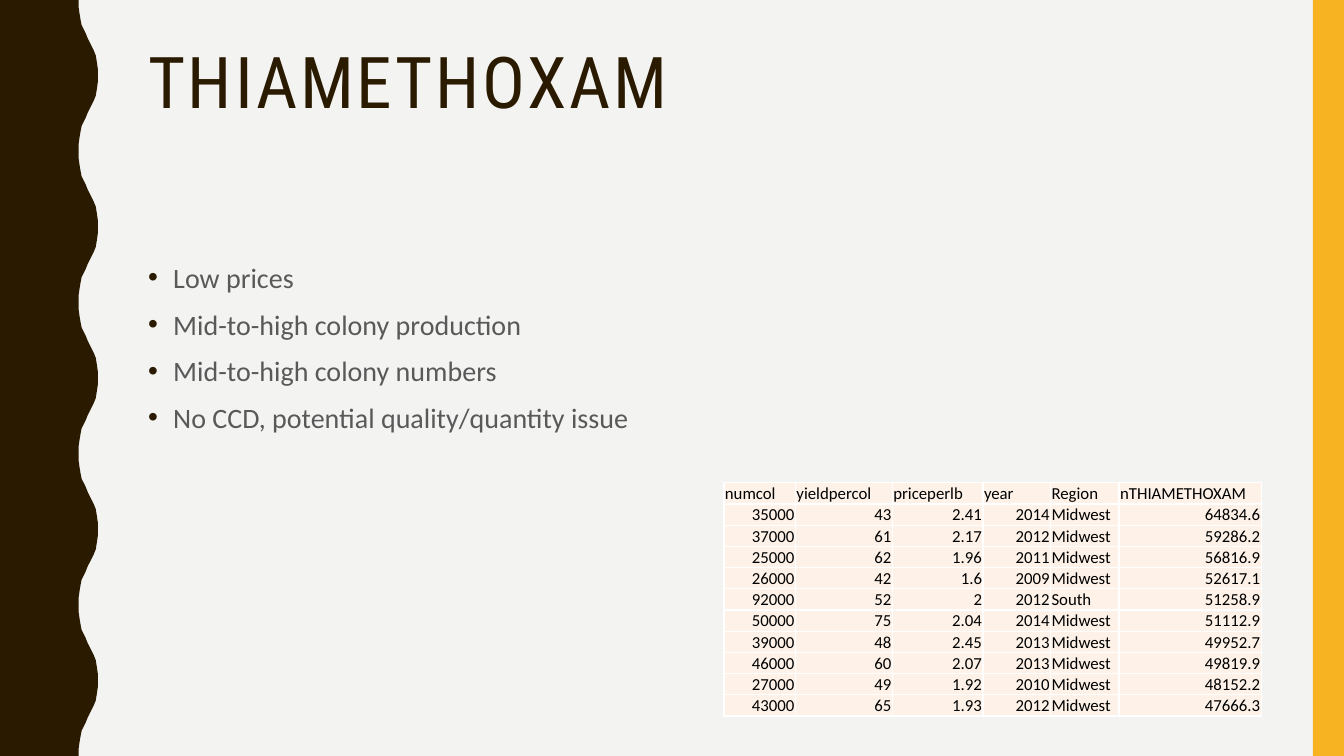
from dataclasses import dataclass

from lxml import etree
from pptx import Presentation
from pptx import util as u
from pptx.dml import color
from pptx.enum import shapes, text
from pptx.oxml import ns

EMU_PER_PX = 9144  # 100 px to the inch
SLIDE_WIDTH, SLIDE_HEIGHT = 1333, 750
COLORS = {
    "background": "F3F3F2",
    "wave": "2A1A00",
    "stripe": "F8B323",
    "heading": "2A1A00",
    "bullet": "2A1A00",
    "body": "595959",
    "cell": "FEF2E8",
    "grid": "FFFFFF",
    "data": "000000",
}

# One half of a wave, from trough to crest
WAVE_PERIOD = 150
HALF_WAVE = [
    (78, 0), (78, 7), (79, 14), (80, 20), (81, 25), (83, 29), (85, 33), (87, 38),
    (89, 42), (91, 46), (93, 50), (95, 55), (96, 61), (97, 68), (97, 75),
]


@dataclass(frozen=True)
class Box:
    left: int
    top: int
    width: int
    height: int

    def emu(self) -> list[u.Emu]:
        return [px(n) for n in (self.left, self.top, self.width, self.height)]


@dataclass(frozen=True)
class TextStyle:
    font: str
    size: int
    color: str
    tracking: int = 0  # hundredths of a point


@dataclass(frozen=True)
class Column:
    header: str
    width: int
    numeric: bool = True


HEADING_STYLE = TextStyle("Roboto Condensed", 51, "heading", 200)
BODY_STYLE = TextStyle("Calibri", 20, "body")
DATA_STYLE = TextStyle("Calibri", 12, "data")

FINDINGS = [
    "Low prices",
    "Mid-to-high colony production",
    "Mid-to-high colony numbers",
    "No CCD, potential quality/quantity issue",
]
COLUMNS = [
    Column("numcol", 71),
    Column("yieldpercol", 96),
    Column("priceperlb", 90),
    Column("year", 67),
    Column("Region", 68, numeric=False),
    Column("nTHIAMETHOXAM", 141),
]
RECORDS = [
    ("35000", "43", "2.41", "2014", "Midwest", "64834.6"),
    ("37000", "61", "2.17", "2012", "Midwest", "59286.2"),
    ("25000", "62", "1.96", "2011", "Midwest", "56816.9"),
    ("26000", "42", "1.6", "2009", "Midwest", "52617.1"),
    ("92000", "52", "2", "2012", "South", "51258.9"),
    ("50000", "75", "2.04", "2014", "Midwest", "51112.9"),
    ("39000", "48", "2.45", "2013", "Midwest", "49952.7"),
    ("46000", "60", "2.07", "2013", "Midwest", "49819.9"),
    ("27000", "49", "1.92", "2010", "Midwest", "48152.2"),
    ("43000", "65", "1.93", "2012", "Midwest", "47666.3"),
]
ROW_HEIGHT = 21


def px(length: int) -> u.Emu:
    return u.Emu(length * EMU_PER_PX)


def paint(fill, name: str) -> None:
    fill.solid()
    fill.fore_color.rgb = color.RGBColor.from_string(COLORS[name])


def paint_shape(shape, name: str) -> None:
    paint(shape.fill, name)
    shape.line.fill.background()
    shape.shadow.inherit = False


def add_run(paragraph, words: str, style: TextStyle) -> None:
    run = paragraph.add_run()
    run.text = words
    run.font.name = style.font
    run.font.size = u.Pt(style.size)
    run.font.color.rgb = color.RGBColor.from_string(COLORS[style.color])
    if style.tracking:
        run.font._element.set("spc", str(style.tracking))


def add_bullet(paragraph, indent: int) -> None:
    properties = paragraph._p.get_or_add_pPr()
    properties.set("marL", str(px(indent)))
    properties.set("indent", str(-px(indent)))
    tint = etree.SubElement(properties, ns.qn("a:buClr"))
    etree.SubElement(tint, ns.qn("a:srgbClr"), val=COLORS["bullet"])
    etree.SubElement(properties, ns.qn("a:buFont"), typeface="Arial")
    etree.SubElement(properties, ns.qn("a:buChar"), char="•")


def add_text(slide, box: Box, lines: list[str], style: TextStyle,
             line_spacing: float, space_before: int = 0, indent: int = 0) -> None:
    frame = slide.shapes.add_textbox(*box.emu()).text_frame
    frame.word_wrap = True
    frame.vertical_anchor = text.MSO_ANCHOR.TOP
    for index, line in enumerate(lines):
        paragraph = frame.add_paragraph() if index else frame.paragraphs[0]
        paragraph.line_spacing = line_spacing
        paragraph.space_before = u.Pt(space_before)
        if indent:
            add_bullet(paragraph, indent)
        add_run(paragraph, line, style)


def add_wavy_edge(slide) -> None:
    crest_to_trough = [(x, WAVE_PERIOD - y) for x, y in HALF_WAVE[-2::-1]]
    wave = HALF_WAVE + crest_to_trough
    edge = [(x, y + start)
            for start in range(0, SLIDE_HEIGHT, WAVE_PERIOD) for x, y in wave]
    builder = slide.shapes.build_freeform(0, 0, scale=EMU_PER_PX)
    builder.add_line_segments(edge + [(0, SLIDE_HEIGHT)], close=True)
    paint_shape(builder.convert_to_shape(), "wave")


def add_grid_lines(cell) -> None:
    """Draw a 1 pt line on each side of the cell; call before filling it."""
    properties = cell._tc.get_or_add_tcPr()
    for side in ("a:lnL", "a:lnR", "a:lnT", "a:lnB"):
        line = etree.SubElement(properties, ns.qn(side), w=str(u.Pt(1)))
        fill = etree.SubElement(line, ns.qn("a:solidFill"))
        etree.SubElement(fill, ns.qn("a:srgbClr"), val=COLORS["grid"])


def add_data_table(slide, left: int, top: int) -> None:
    rows = [tuple(column.header for column in COLUMNS), *RECORDS]
    box = Box(left, top, sum(column.width for column in COLUMNS), ROW_HEIGHT * len(rows))
    table = slide.shapes.add_table(len(rows), len(COLUMNS), *box.emu()).table
    table.first_row = table.horz_banding = False
    for index, column in enumerate(COLUMNS):
        table.columns[index].width = px(column.width)
    for row_index, row in enumerate(rows):
        table.rows[row_index].height = px(ROW_HEIGHT)
        for column_index, (column, value) in enumerate(zip(COLUMNS, row)):
            cell = table.cell(row_index, column_index)
            cell.margin_left = cell.margin_top = cell.margin_right = px(1)
            cell.margin_bottom = 0
            cell.vertical_anchor = text.MSO_ANCHOR.BOTTOM
            add_grid_lines(cell)
            paint(cell.fill, "cell")
            paragraph = cell.text_frame.paragraphs[0]
            if row_index and column.numeric:
                paragraph.alignment = text.PP_ALIGN.RIGHT
            add_run(paragraph, value, DATA_STYLE)


def main() -> None:
    deck = Presentation()
    deck.slide_width, deck.slide_height = px(SLIDE_WIDTH), px(SLIDE_HEIGHT)
    slide = deck.slides.add_slide(deck.slide_layouts[6])
    paint(slide.background.fill, "background")
    add_wavy_edge(slide)
    stripe = Box(1302, 0, 31, SLIDE_HEIGHT)
    paint_shape(slide.shapes.add_shape(shapes.MSO_SHAPE.RECTANGLE, *stripe.emu()), "stripe")
    add_text(slide, Box(137, 42, 1113, 163), ["THIAMETHOXAM"], HEADING_STYLE, 0.9)
    add_text(slide, Box(137, 250, 1113, 393), FINDINGS, BODY_STYLE, 1.1,
             space_before=7, indent=25)
    add_data_table(slide, 718, 479)
    deck.save("out.pptx")


if __name__ == "__main__":
    main()
